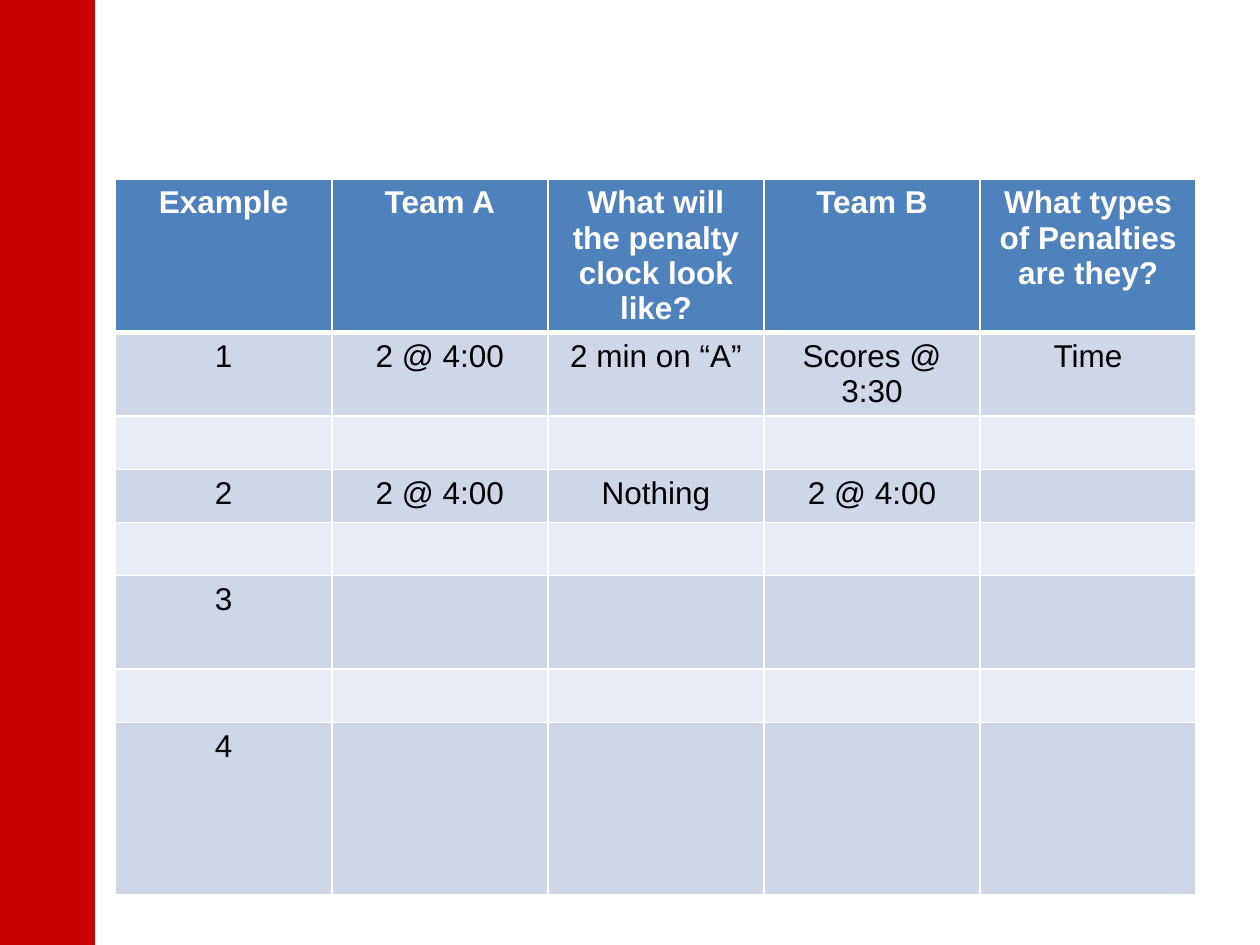
from lxml import etree
from pptx import Presentation
from pptx.dml.color import RGBColor
from pptx.enum import shapes, text
from pptx.oxml.ns import qn
from pptx.util import Pt

COLORS = {
    "bar": "CC0000",
    "header": "4F81BD",
    "odd_row": "CFD7E7",
    "even_row": "E8ECF4",
    "border": "FFFFFF",
    "header_text": "FFFFFF",
    "body_text": "000000",
}
# Each row: height in points, then the texts of its leading cells
ROWS = [
    (87.4, ["Example", "Team A", "What will the penalty clock look like?",
            "Team B", "What types of Penalties are they?"]),
    (47.7, ["1", "2 @ 4:00", "2 min on “A”", "Scores @ 3:30", "Time"]),
    (30.4, []),
    (30.4, ["2", "2 @ 4:00", "Nothing", "2 @ 4:00"]),
    (30.4, []),
    (53.4, ["3"]),
    (30.4, []),
    (98.4, ["4"]),
]
COLUMN_COUNT = 5
COLUMN_WIDTH = 123.5
TABLE_LEFT, TABLE_TOP = 66.1, 102.3
SLIDE_WIDTH, SLIDE_HEIGHT = 720, 540
BAR_WIDTH = 54


def rgb(name):
    return RGBColor.from_string(COLORS[name])


def write_text(frame, content, size=18, font="Arial", color="body_text", bold=False):
    paragraph = frame.paragraphs[0]
    paragraph.alignment = text.PP_ALIGN.CENTER
    run = paragraph.add_run()
    run.text = content
    run.font.size = Pt(size)
    run.font.name = font
    run.font.bold = bold
    run.font.color.rgb = rgb(color)


def add_borders(cell, **widths):
    """Draw cell borders; widths maps L, R, T and B to points, in that order."""
    properties = cell._tc.get_or_add_tcPr()
    for side, width in widths.items():
        line = etree.SubElement(properties, qn(f"a:ln{side}"), w=str(Pt(width)))
        fill = etree.SubElement(line, qn("a:solidFill"))
        etree.SubElement(fill, qn("a:srgbClr"), val=COLORS["border"])


def add_bar(slide):
    bar = slide.shapes.add_shape(shapes.MSO_SHAPE.RECTANGLE, 0, 0,
                                 Pt(BAR_WIDTH), Pt(SLIDE_HEIGHT))
    bar.shadow.inherit = False
    bar.fill.solid()
    bar.fill.fore_color.rgb = rgb("bar")
    bar.line.color.rgb = rgb("bar")
    bar.line.width = Pt(0.75)


def add_penalty_table(slide):
    total_height = sum(height for height, _ in ROWS)
    table = slide.shapes.add_table(
        len(ROWS), COLUMN_COUNT, Pt(TABLE_LEFT), Pt(TABLE_TOP),
        Pt(COLUMN_WIDTH * COLUMN_COUNT), Pt(total_height)).table
    for column in table.columns:
        column.width = Pt(COLUMN_WIDTH)
    for index, (height, contents) in enumerate(ROWS):
        table.rows[index].height = Pt(height)
        is_header = index == 0
        fill = "header" if is_header else "odd_row" if index % 2 else "even_row"
        for column_index, cell in enumerate(table.rows[index].cells):
            add_borders(cell, L=1, R=1, T=3 if index == 1 else 1,
                        B=3 if is_header else 1)
            cell.fill.solid()
            cell.fill.fore_color.rgb = rgb(fill)
            if column_index < len(contents):
                write_text(cell.text_frame, contents[column_index], bold=is_header,
                           color="header_text" if is_header else "body_text")


def main():
    presentation = Presentation()
    presentation.slide_width = Pt(SLIDE_WIDTH)
    presentation.slide_height = Pt(SLIDE_HEIGHT)
    blank_layout = presentation.slide_layouts[6]
    slide = presentation.slides.add_slide(blank_layout)
    add_bar(slide)
    add_penalty_table(slide)
    presentation.save("out.pptx")


if __name__ == "__main__":
    main()
